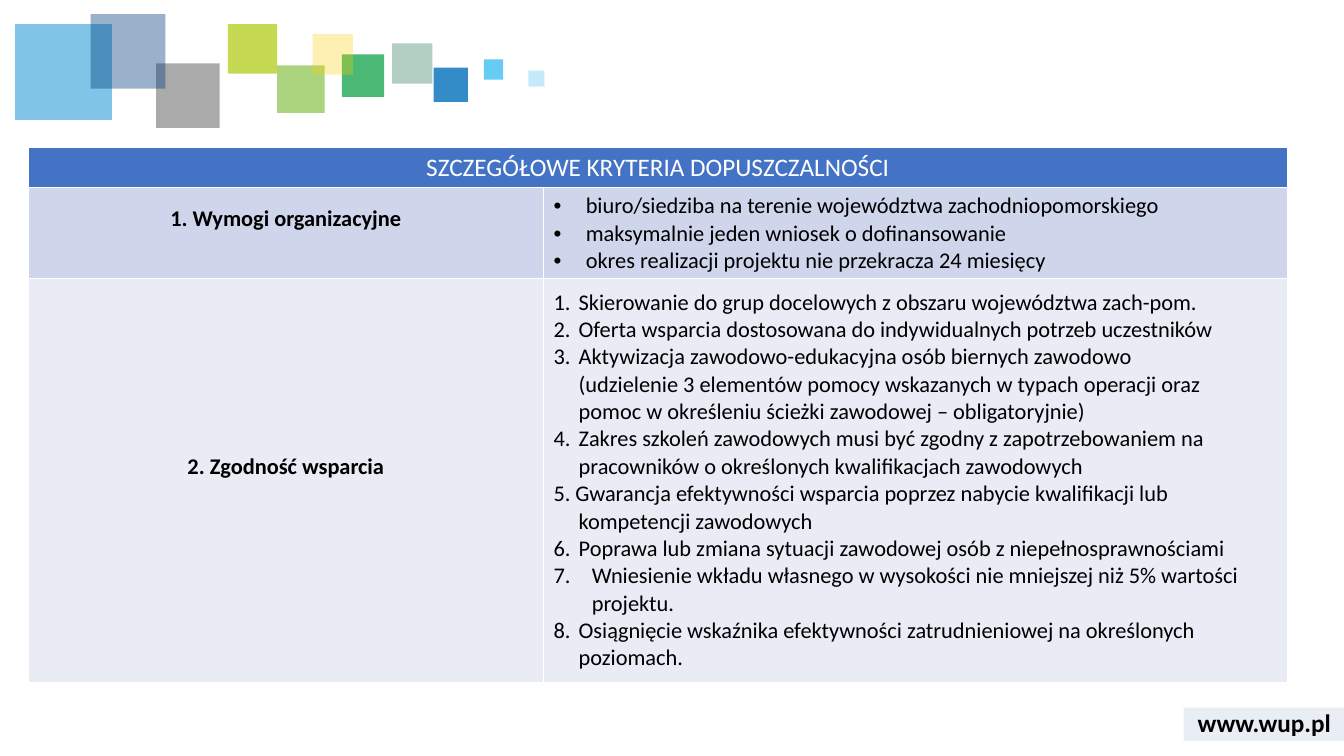
from dataclasses import dataclass

from lxml.etree import SubElement
from pptx import Presentation
from pptx.dml.color import RGBColor
from pptx.enum.shapes import MSO_SHAPE as Preset
from pptx.enum.text import MSO_ANCHOR as Anchor, PP_ALIGN as Align
from pptx.oxml import parse_xml
from pptx.oxml.ns import nsdecls, qn
from pptx.util import Inches, Pt

FONT = "Calibri"
COLORS = {
    "white": "FFFFFF", "black": "000000", "header": "4472C4",
    "band": "CFD5EA", "light": "E9EBF5", "navy": "2F5597",
    "pine": "006138", "blue": "006EB9", "green": "009A3C", "azure": "028BD3",
    "leaf": "75B82A", "gray": "575757", "deep": "003D7C", "sky": "40C0F1",
    "lime": "AFCA0B", "yellow": "FED000",
}


@dataclass
class Tile:
    left: float
    top: float
    width: float
    height: float
    color: str
    opacity: int


@dataclass
class Item:
    text: str
    margin: float = 0.25
    hanging: bool = True
    bullet: str = ""
    start: int = 0


@dataclass
class Criterion:
    label: str
    items: list[Item]
    color: str


TILES = [
    Tile(3.89, 0.43, 0.4, 0.4, "pine", 30),
    Tile(4.3, 0.67, 0.34, 0.34, "blue", 80),
    Tile(3.39, 0.54, 0.42, 0.42, "green", 70),
    Tile(0.15, 0.24, 0.96, 0.95, "azure", 50),
    Tile(2.75, 0.65, 0.47, 0.47, "leaf", 60),
    Tile(1.55, 0.63, 0.63, 0.64, "gray", 50),
    Tile(0.9, 0.14, 0.74, 0.74, "deep", 40),
    Tile(4.8, 0.59, 0.19, 0.2, "sky", 80),
    Tile(2.26, 0.24, 0.49, 0.49, "lime", 70),
    Tile(3.1, 0.34, 0.4, 0.4, "yellow", 30),
    Tile(5.24, 0.7, 0.16, 0.16, "sky", 30),
    Tile(11.74, 7.02, 1.6, 0.33, "navy", 10),
]

# A vertical tab marks a line break inside a paragraph
CRITERIA = [
    Criterion("1. Wymogi organizacyjne", [
        Item("biuro/siedziba na terenie województwa zachodniopomorskiego", 0.32, bullet="•"),
        Item("maksymalnie jeden wniosek o dofinansowanie", 0.32, bullet="•"),
        Item("okres realizacji projektu nie przekracza 24 miesięcy", 0.32, bullet="•"),
    ], "band"),
    Criterion("2. Zgodność wsparcia", [
        Item("1.\tSkierowanie do grup docelowych z obszaru województwa zach-pom."),
        Item("2.\tOferta wsparcia dostosowana do indywidualnych potrzeb uczestników"),
        Item("3.\tAktywizacja zawodowo-edukacyjna osób biernych zawodowo"),
        Item("(udzielenie 3 elementów pomocy wskazanych w typach operacji oraz\v"
             "pomoc w określeniu ścieżki zawodowej – obligatoryjnie)", hanging=False),
        Item("4.\tZakres szkoleń zawodowych musi być zgodny z zapotrzebowaniem na\v"
             "pracowników o określonych kwalifikacjach zawodowych"),
        Item("5. Gwarancja efektywności wsparcia poprzez nabycie kwalifikacji lub\v"
             "kompetencji zawodowych"),
        Item("6.\tPoprawa lub zmiana sytuacji zawodowej osób z niepełnosprawnościami"),
        Item("Wniesienie wkładu własnego w wysokości nie mniejszej niż 5% wartości\v"
             "projektu.", 0.38, start=7),
        Item("8.\tOsiągnięcie wskaźnika efektywności zatrudnieniowej na określonych\v"
             "poziomach."),
    ], "light"),
]


def rgb(name: str) -> RGBColor:
    return RGBColor.from_string(COLORS[name])


def style(para, size: int, color: str, bold: bool = False) -> None:
    font = para.font
    font.name, font.size, font.bold = FONT, Pt(size), bold
    font.color.rgb = rgb(color)


def draw_tile(page, tile: Tile) -> None:
    box = page.shapes.add_shape(Preset.RECTANGLE, Inches(tile.left), Inches(tile.top),
                                Inches(tile.width), Inches(tile.height))
    box.shadow.inherit = False
    box.line.fill.background()
    box.fill.solid()
    box.fill.fore_color.rgb = rgb(tile.color)
    color = box.fill._xPr.find(qn("a:solidFill"))[0]
    SubElement(color, qn("a:alpha"), val=str(tile.opacity * 1000))


def format_cell(cell, color: str) -> None:
    cell.vertical_anchor = Anchor.MIDDLE
    cell.fill.solid()
    cell.fill.fore_color.rgb = rgb(color)
    properties = cell._tc.get_or_add_tcPr()
    for index, side in enumerate(("lnL", "lnR", "lnT", "lnB")):
        properties.insert(index, parse_xml(
            f'<a:{side} {nsdecls("a")} w="{Pt(1)}"><a:solidFill>'
            f'<a:srgbClr val="{COLORS["white"]}"/></a:solidFill></a:{side}>'))


def write_label(frame, text: str, size: int, color: str, bold: bool = False) -> None:
    para = frame.paragraphs[0]
    para.text = text
    para.alignment = Align.CENTER
    style(para, size, color, bold)


def write_items(frame, items: list[Item]) -> None:
    for index, item in enumerate(items):
        para = frame.paragraphs[0] if index == 0 else frame.add_paragraph()
        para.text = item.text
        properties = para._p.get_or_add_pPr()
        properties.set("marL", str(Inches(item.margin)))
        properties.set("indent", str(-Inches(item.margin) if item.hanging else 0))
        if item.bullet:
            SubElement(properties, qn("a:buFont"), typeface="Arial")
            SubElement(properties, qn("a:buChar"), char=item.bullet)
        elif item.start:
            SubElement(properties, qn("a:buAutoNum"), type="arabicPeriod",
                       startAt=str(item.start))
        style(para, 16, "black")


def draw_table(page) -> None:
    table = page.shapes.add_table(3, 2, Inches(0.28), Inches(1.46),
                                  Inches(12.49), Inches(5.3)).table
    table.first_row = table.horz_banding = False
    for column, width in zip(table.columns, (5.11, 7.38)):
        column.width = Inches(width)
    for row, height in zip(table.rows, (0.39, 0.9, 4.01)):
        row.height = Inches(height)

    # Header across both columns
    header = table.cell(0, 0)
    header.merge(table.cell(0, 1))
    for cell in table.rows[0].cells:
        format_cell(cell, "header")
    write_label(header.text_frame, "SZCZEGÓŁOWE KRYTERIA DOPUSZCZALNOŚCI", 18, "white")

    # One row per criterion; labels sit slightly above the middle
    for index, criterion in enumerate(CRITERIA, start=1):
        label, details = table.cell(index, 0), table.cell(index, 1)
        for cell in (label, details):
            format_cell(cell, criterion.color)
        label.margin_bottom = Inches(0.32)
        write_label(label.text_frame, criterion.label, 16, "black", True)
        write_items(details.text_frame, criterion.items)


def main() -> None:
    deck = Presentation()
    deck.slide_width, deck.slide_height = Inches(13.33), Inches(7.5)
    page = deck.slides.add_slide(deck.slide_layouts[6])

    # Decorative squares and the address strip
    for tile in TILES:
        draw_tile(page, tile)

    # Web address
    box = page.shapes.add_textbox(Inches(11.74), Inches(6.97), Inches(1.6), Inches(0.4))
    box.text_frame.word_wrap = True
    box.text_frame.vertical_anchor = Anchor.MIDDLE
    write_label(box.text_frame, "www.wup.pl", 18, "black", True)

    draw_table(page)
    deck.save("out.pptx")


if __name__ == "__main__":
    main()
